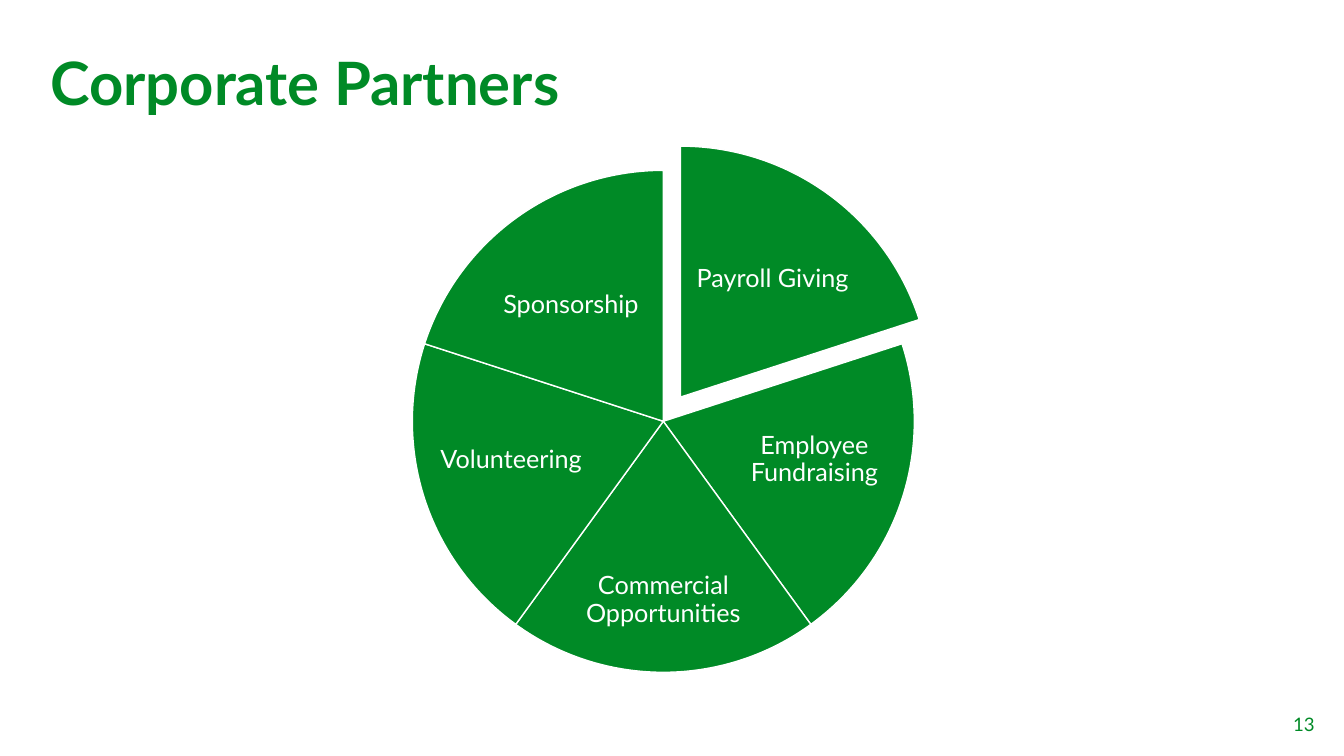
from pptx import Presentation
from pptx.dml.color import RGBColor
from pptx.enum.shapes import MSO_SHAPE
from pptx.enum.text import MSO_ANCHOR as Anchor, PP_ALIGN as Align
from pptx.util import Inches, Pt

GREEN, WHITE = "008A26", "FFFFFF"

deck = Presentation()
deck.slide_width, deck.slide_height = Inches(13.333), Inches(7.5)
page = deck.slides.add_slide(deck.slide_layouts[6])


def place(left, top, width, height):
    """Turn percentages of the slide's size into lengths."""
    across, down = deck.slide_width / 100, deck.slide_height / 100
    return int(left * across), int(top * down), int(width * across), int(height * down)


def add_text(shapes, area, text, size, colour, align, spacing=1.0):
    box = shapes.add_textbox(*place(*area))
    box.text_frame.word_wrap = True
    box.text_frame.text = text
    para = box.text_frame.paragraphs[0]
    para.alignment, para.line_spacing = align, spacing
    span = para.runs[0]
    span.font.name, span.font.size = "Lato", Pt(size)
    span.font.color.rgb = RGBColor.from_string(colour)
    return box


title = add_text(page.shapes, (3, 6.53, 44.1, 14.8), "Corporate Partners",
                 42.7, GREEN, Align.LEFT, 0.9)
title.text_frame.paragraphs[0].runs[0].font.bold = True
add_text(page.shapes, (80.7, 93.6, 17.85, 4.27), "13", 13.3, GREEN, Align.RIGHT)

# Clockwise from the top: label, its area, and how far the slice is pulled out
slices = [
    ("Payroll Giving", (51.15, 29.2, 12.68, 15.47), (1.28, -3.2)),
    ("Employee Fundraising", (55.05, 52.53, 11.1, 16.67), (0, 0)),
    ("Commercial Opportunities", (42.68, 72.27, 13.35, 14.27), (0, 0)),
    ("Volunteering", (32.48, 52.53, 11.1, 16.67), (0, 0)),
    ("Sponsorship", (36.15, 32.67, 12.68, 15.47), (0, 0)),
]
sweep = 360 / len(slices)
DEGREE = 0.6  # one degree in adjustment units

wheel = page.shapes.add_group_shape().shapes
for index, (label, area, (right, down)) in enumerate(slices):
    wedge = wheel.add_shape(MSO_SHAPE.PIE, *place(30.68 + right, 22.53 + down, 37.35, 66.4))
    start = 270 + index * sweep
    wedge.adjustments[0] = start % 360 * DEGREE
    wedge.adjustments[1] = (start + sweep) % 360 * DEGREE
    wedge.shadow.inherit = False
    wedge.fill.solid()
    wedge.fill.fore_color.rgb = RGBColor.from_string(GREEN)
    wedge.line.color.rgb = RGBColor.from_string(WHITE)
    wedge.line.width = Pt(1)

    frame = add_text(wheel, area, label, 18, WHITE, Align.CENTER, 0.9).text_frame
    frame.vertical_anchor = Anchor.MIDDLE
    frame.margin_left = frame.margin_right = Inches(0.03)
    frame.margin_top = frame.margin_bottom = Inches(0.03)

deck.save("out.pptx")
